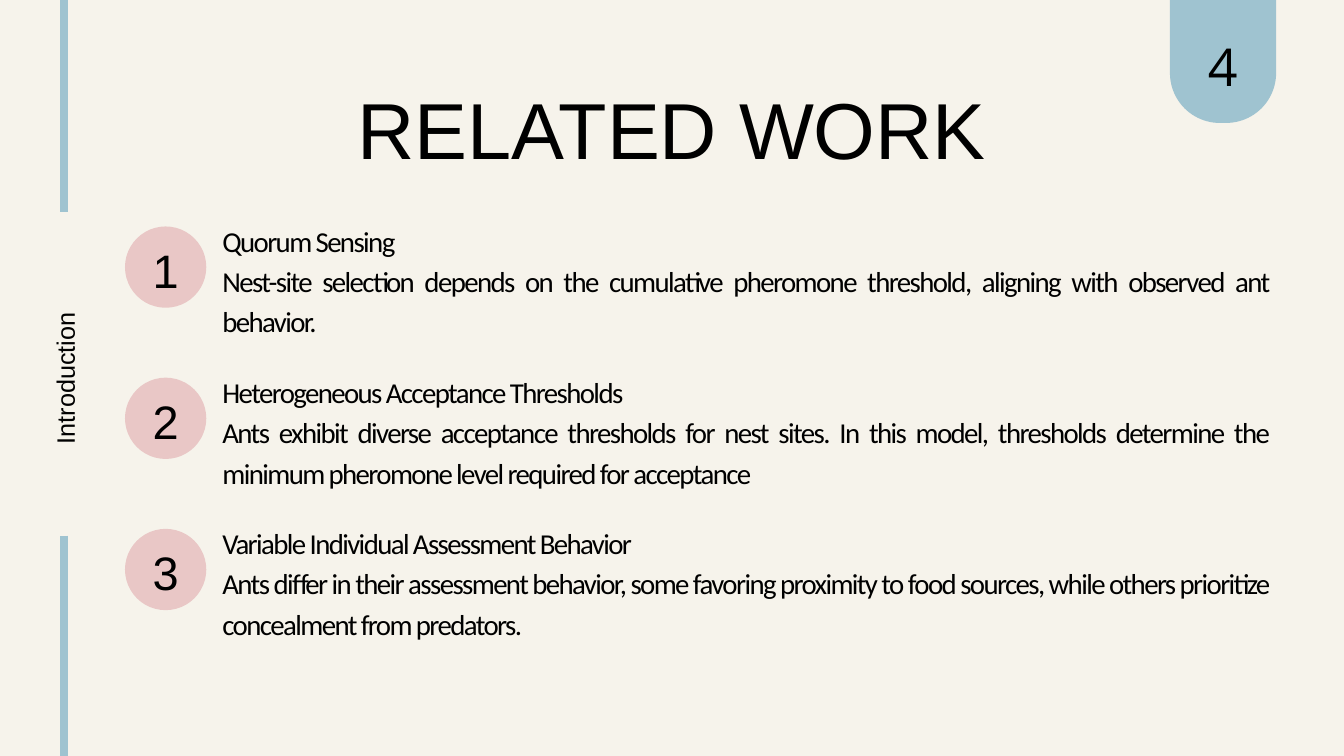
from lxml import etree
from pptx import Presentation
from pptx.dml.color import RGBColor
from pptx.enum.shapes import MSO_CONNECTOR, MSO_SHAPE
from pptx.enum.text import MSO_ANCHOR, MSO_AUTO_SIZE, PP_ALIGN
from pptx.oxml.ns import qn
from pptx.util import Inches, Pt

CREAM = RGBColor(0xF6, 0xF3, 0xEB)
BLUE = RGBColor(0x9F, 0xC3, 0xD0)
PINK = RGBColor(0xE9, 0xC7, 0xC6)
BLACK = RGBColor(0, 0, 0)

FINDINGS = [
    ("Quorum Sensing",
     "Nest-site selection depends on the cumulative pheromone threshold, "
     "aligning with observed ant behavior."),
    ("Heterogeneous Acceptance Thresholds",
     "Ants exhibit diverse acceptance thresholds for nest sites. In this model, "
     "thresholds determine the minimum pheromone level required for acceptance"),
    ("Variable Individual Assessment Behavior",
     "Ants differ in their assessment behavior, some favoring proximity to food "
     "sources, while others prioritize concealment from predators."),
]


def write(frame, text, size, leading, font="Arial", align=PP_ALIGN.CENTER, tracking=0):
    """Fill a text frame without insets; leading and tracking are in points."""
    frame.word_wrap = True
    frame.auto_size = MSO_AUTO_SIZE.NONE
    frame.vertical_anchor = MSO_ANCHOR.TOP
    frame.margin_left = frame.margin_right = frame.margin_top = frame.margin_bottom = 0
    frame.text = text
    for paragraph in frame.paragraphs:
        paragraph.alignment = align
        paragraph.line_spacing = Pt(leading)
        for run in paragraph.runs:
            run.font.name = font
            run.font.size = Pt(size)
            run.font.color.rgb = BLACK
            if tracking:
                run.font._element.set("spc", str(round(tracking * 100)))


def add_text(slide, left, top, width, height, *args, **style):
    box = slide.shapes.add_textbox(Inches(left), Inches(top), Inches(width), Inches(height))
    write(box.text_frame, *args, **style)
    return box


def add_filled(slide, preset, left, top, width, height, color):
    shape = slide.shapes.add_shape(
        preset, Inches(left), Inches(top), Inches(width), Inches(height))
    shape.shadow.inherit = False
    shape.fill.solid()
    shape.fill.fore_color.rgb = color
    shape.line.fill.background()
    return shape


def add_title(slide, left, top, width, height):
    title = slide.shapes.title
    title.left, title.top = Inches(left), Inches(top)
    title.width, title.height = Inches(width), Inches(height)
    write(title.text_frame, "RELATED WORK", 85, 119)


def add_finding(slide, left, top, width, number, heading, detail):
    diameter, text_offset = 1.21, 1.45
    add_filled(slide, MSO_SHAPE.OVAL, left, top, diameter, diameter, PINK)
    add_text(slide, left, top + 0.08, diameter, 0.94, str(number), 50.3, 70.5)
    add_text(slide, left + text_offset, top - 0.13, width - text_offset, 1.83,
             f"{heading}\n{detail}", 30.9, 43.2,
             font="Calibri", align=PP_ALIGN.JUSTIFY, tracking=-1.7)


def add_section_rail(slide, center, height):
    """Vertical section name between two bars."""
    label_length, label_height, label_middle = 7.53, 0.51, 5.63
    label = add_text(slide, center - 0.03 - label_length / 2, label_middle - label_height / 2,
                     label_length, label_height, "Introduction", 27, 37.8)
    label.rotation = 270
    for start, end in [(0, 3.16), (7.97, height)]:
        bar = slide.shapes.add_connector(
            MSO_CONNECTOR.STRAIGHT, Inches(center), Inches(start), Inches(center), Inches(end))
        bar.line.color.rgb = BLUE
        bar.line.width = Pt(9)
        etree.SubElement(bar._element.spPr, qn("a:effectLst"))


def add_page_badge(slide, left, top, width, height):
    badge = add_filled(slide, MSO_SHAPE.ROUND_2_SAME_RECTANGLE, left, top, width, height, BLUE)
    badge.adjustments[0] = 0
    badge.adjustments[1] = 0.47
    add_text(slide, left - 0.07, top + 0.36, width + 0.13, 1.02, "4", 55.8, 78,
             font="Open Sans")


def main():
    deck = Presentation()
    deck.slide_width, deck.slide_height = Inches(20), Inches(11.25)
    slide = deck.slides.add_slide(deck.slide_layouts[5])
    slide.background.fill.solid()
    slide.background.fill.fore_color.rgb = CREAM

    add_title(slide, 1.12, 0.95, 17.75, 1.59)
    for index, (heading, detail) in enumerate(FINDINGS):
        add_finding(slide, 1.86, 3.37 + 2.25 * index, 17.02, index + 1, heading, detail)
    add_section_rail(slide, 0.95, 11.25)
    add_page_badge(slide, 17.41, 0, 1.58, 1.83)
    deck.save("out.pptx")


if __name__ == "__main__":
    main()
